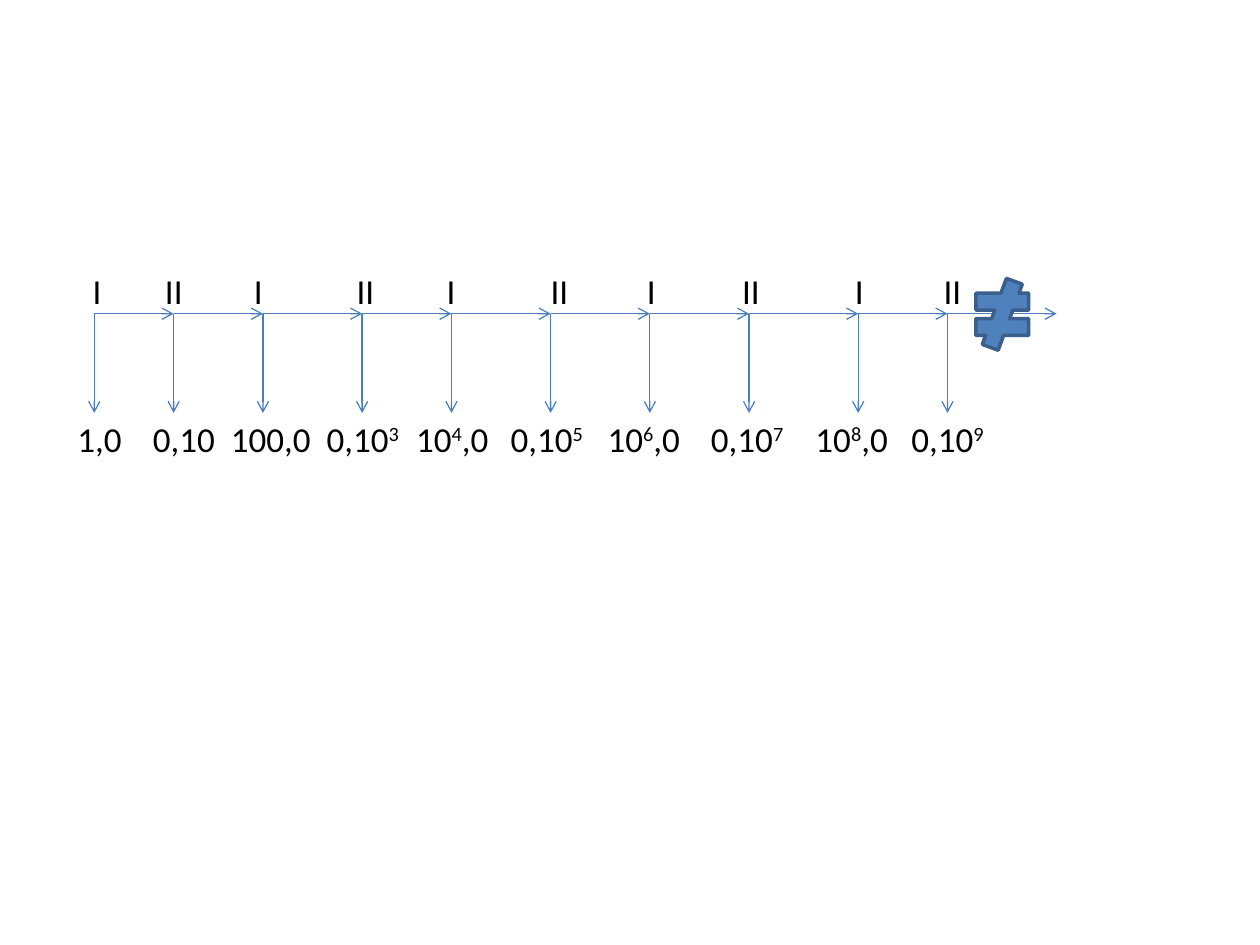
from dataclasses import dataclass
from itertools import accumulate

from pptx import Presentation
from pptx import util as u
from pptx.dml.color import RGBColor
from pptx.enum import shapes, text
from pptx.oxml.ns import qn
from lxml import etree

ARROW_BLUE = RGBColor(0x4B, 0x7E, 0xBC)
SIGN_FILL = RGBColor(0x4F, 0x81, 0xBD)
SIGN_EDGE = RGBColor(0x3A, 0x5F, 0x8C)
BLACK = RGBColor(0, 0, 0)

SLIDE_W, SLIDE_H = u.Inches(10), u.Inches(7.5)
COLUMN = SLIDE_W / 127
AXIS_START = 9.5
AXIS_Y = u.Inches(2.49)
DROP = 10 * COLUMN
MARK_TOP, OUTPUT_TOP = 2.14, 3.31
LABEL_W, LABEL_H = 0.7, 0.34


@dataclass(frozen=True)
class Step:
    mark: str
    output: tuple[str, str, str]
    columns: int
    mark_centre: float
    output_centre: float


STEPS = (
    Step("I", ("1,0", "", ""), 8, 0.77, 0.79),
    Step("II", ("0,10", "", ""), 9, 1.38, 1.46),
    Step("I", ("100,0", "", ""), 10, 2.05, 2.15),
    Step("II", ("0,10", "3", ""), 9, 2.90, 2.88),
    Step("I", ("10", "4", ",0"), 10, 3.58, 3.59),
    Step("II", ("0,10", "5", ""), 10, 4.44, 4.34),
    Step("I", ("10", "6", ",0"), 10, 5.17, 5.11),
    Step("II", ("0,10", "7", ""), 11, 5.96, 5.93),
    Step("I", ("10", "8", ",0"), 9, 6.82, 6.76),
    Step("II", ("0,10", "9", ""), 11, 7.56, 7.52),
)


def draw_arrow(slide, x1: float, y1: float, x2: float, y2: float) -> None:
    arrow = slide.shapes.add_connector(
        shapes.MSO_CONNECTOR.STRAIGHT, *(round(v) for v in (x1, y1, x2, y2)))
    arrow.line.color.rgb = ARROW_BLUE
    arrow.line.width = u.Pt(0.75)
    etree.SubElement(arrow.line._get_or_add_ln(), qn("a:tailEnd"), type="arrow")
    etree.SubElement(arrow._element.spPr, qn("a:effectLst"))


def write_label(slide, centre: float, top: float,
                base: str, exponent: str = "", rest: str = "") -> None:
    label = slide.shapes.add_textbox(
        u.Inches(centre - LABEL_W / 2), u.Inches(top),
        u.Inches(LABEL_W), u.Inches(LABEL_H))
    frame = label.text_frame
    frame.word_wrap = False
    frame.margin_left = frame.margin_right = 0
    frame.margin_top = frame.margin_bottom = 0
    line = frame.paragraphs[0]
    line.alignment = text.PP_ALIGN.CENTER
    for part in filter(None, (base, exponent, rest)):
        run = line.add_run()
        run.text = part
        run.font.size = u.Pt(20)
        run.font.name = "Calibri"
        run.font.color.rgb = BLACK
    if exponent:
        line.runs[1]._r.get_or_add_rPr().set("baseline", "30000")


def draw_not_equal(slide) -> None:
    sign = slide.shapes.add_shape(
        shapes.MSO_SHAPE.MATH_NOT_EQUAL,
        u.Inches(7.67), u.Inches(2.21), u.Inches(0.57), u.Inches(0.57))
    sign.shadow.inherit = False
    sign.fill.solid()
    sign.fill.fore_color.rgb = SIGN_FILL
    sign.line.color.rgb = SIGN_EDGE
    sign.line.width = u.Pt(2)


def main() -> None:
    deck = Presentation()
    deck.slide_width, deck.slide_height = SLIDE_W, SLIDE_H
    slide = deck.slides.add_slide(deck.slide_layouts[6])

    for step in STEPS:
        write_label(slide, step.mark_centre, MARK_TOP, step.mark)
    for step in STEPS:
        write_label(slide, step.output_centre, OUTPUT_TOP, *step.output)

    ticks = [column * COLUMN for column in
             accumulate((step.columns for step in STEPS), initial=AXIS_START)]
    for start, end in zip(ticks, ticks[1:]):
        draw_arrow(slide, start, AXIS_Y, end, AXIS_Y)
    for tick in ticks[:-1]:
        draw_arrow(slide, tick, AXIS_Y, tick, AXIS_Y + DROP)
    draw_not_equal(slide)
    deck.save("out.pptx")


if __name__ == "__main__":
    main()
